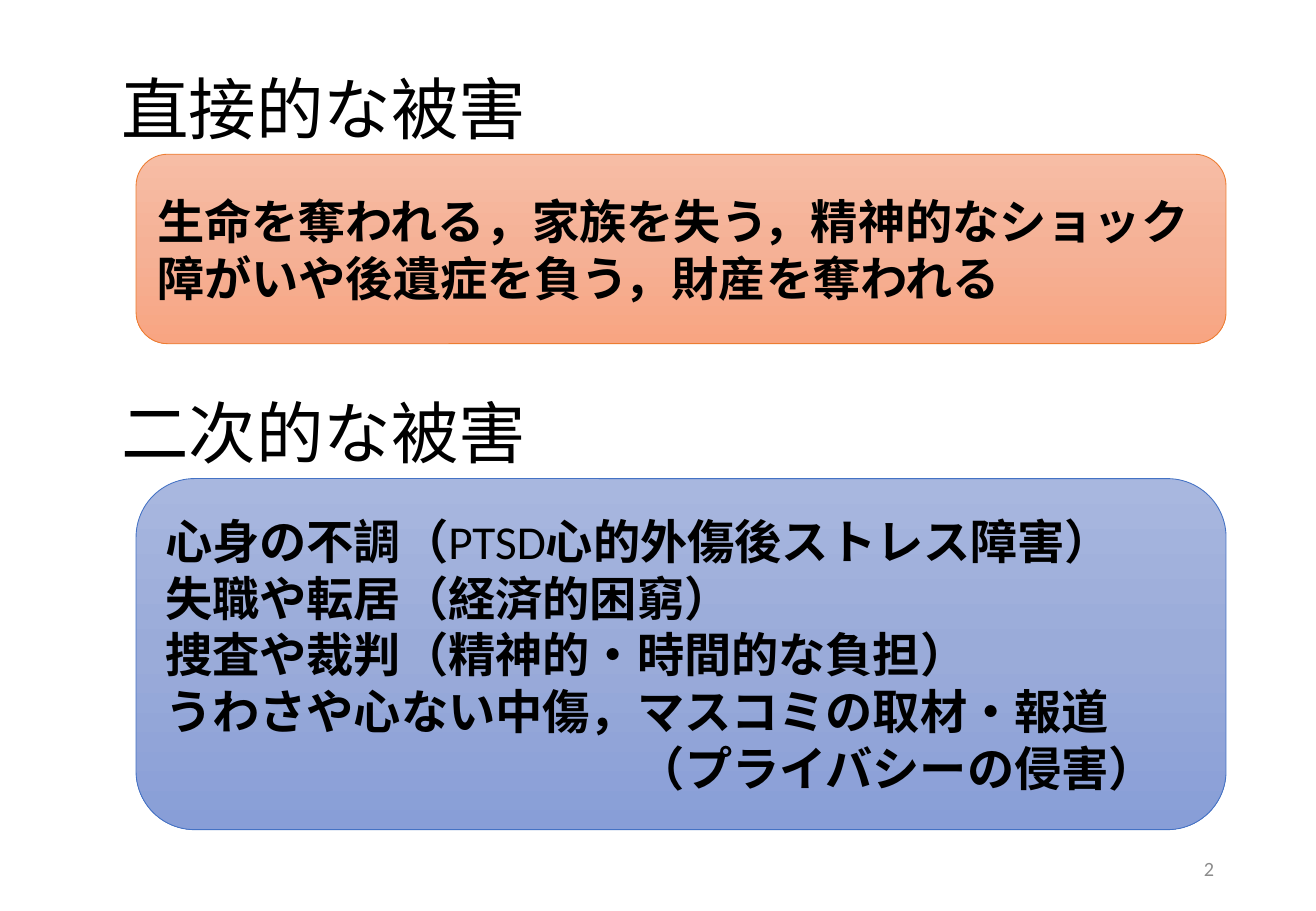
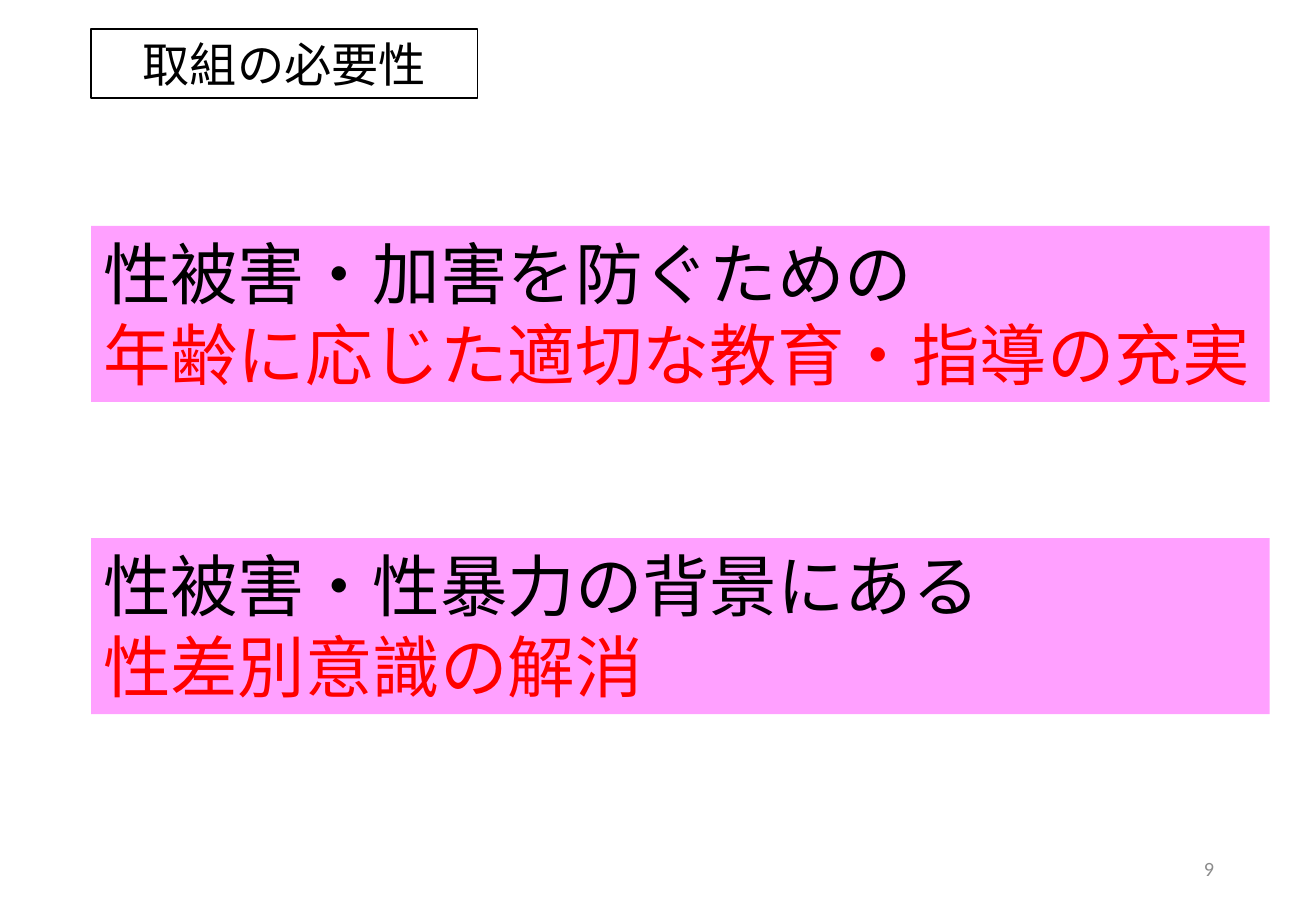
"""Builds two slides on the harm crime victims suffer and the action it calls for."""
from copy import deepcopy

from pptx import Presentation
from pptx.dml.color import RGBColor
from pptx.enum.shapes import MSO_SHAPE as Shape
from pptx.enum.text import MSO_ANCHOR as Anchor, PP_ALIGN as Align
from pptx.oxml.ns import qn
from pptx.util import Pt

PX = 9144
BLACK = RGBColor(0x00, 0x00, 0x00)
WHITE = RGBColor(0xFF, 0xFF, 0xFF)
RED = RGBColor(0xFF, 0x00, 0x00)
GREY = RGBColor(0x8C, 0x8C, 0x8C)
PINK = RGBColor(0xFF, 0xA0, 0xFF)
ORANGE = RGBColor(0xED, 0x7D, 0x31)
BLUE = RGBColor(0x44, 0x72, 0xC4)
ORANGE_SHADES = (RGBColor(0xF7, 0xBD, 0xA5), RGBColor(0xF5, 0xB1, 0x96), RGBColor(0xF8, 0xA5, 0x82))
BLUE_SHADES = (RGBColor(0xA8, 0xB7, 0xDF), RGBColor(0x9A, 0xAB, 0xD9), RGBColor(0x88, 0x9E, 0xD7))
GOTHIC = "Noto Sans CJK JP"
CALIBRI = "Calibri"


def add_panel(slide, kind, box, fill=None, line=None, width=1):
    panel = slide.shapes.add_shape(kind, *(v * PX for v in box))
    panel.shadow.inherit = False
    if fill is None:
        panel.fill.background()
    else:
        panel.fill.solid()
        panel.fill.fore_color.rgb = fill
    if line is None:
        panel.line.fill.background()
    else:
        panel.line.color.rgb = line
        panel.line.width = Pt(width)
    return panel


def write(shape, lines, size, font, colors=(BLACK,), bold=False, align=Align.LEFT, anchor=Anchor.TOP):
    frame = shape.text_frame
    frame.word_wrap = True
    frame.vertical_anchor = anchor
    frame.text = "\n".join(lines)
    for i, paragraph in enumerate(frame.paragraphs):
        paragraph.alignment = align
        paragraph.line_spacing = Pt(size * 1.2)
        before, term, after = paragraph.text.partition("PTSD")
        paragraph.text = before
        for part in filter(None, (term, after)):
            paragraph.add_run().text = part
        for run in paragraph.runs:
            run.font.size = Pt(size)
            run.font.bold = bold and run.text != "PTSD"
            run.font.color.rgb = colors[i % len(colors)]
            run.font.name = font
            east_asian = deepcopy(run.font._element.find(qn("a:latin")))
            east_asian.tag = qn("a:ea")
            run.font._element.find(qn("a:latin")).addnext(east_asian)


deck = Presentation()
deck.slide_width, deck.slide_height = 1083 * PX, 750 * PX
harm, action = (deck.slides.add_slide(deck.slide_layouts[6]) for _ in range(2))

for slide, number in ((harm, "2"), (action, "9")):
    page = slide.shapes.add_textbox(*(v * PX for v in (765, 695, 244, 40)))
    write(page, [number], 12, CALIBRI, (GREY,), align=Align.RIGHT, anchor=Anchor.MIDDLE)

HARMS = (
    ("直接的な被害", 50, 156, ORANGE, ORANGE_SHADES, (
        "生命を奪われる，家族を失う，精神的なショック",
        "障がいや後遺症を負う，財産を奪われる")),
    ("二次的な被害", 317, 289, BLUE, BLUE_SHADES, (
        "心身の不調（PTSD心的外傷後ストレス障害）",
        "失職や転居（経済的困窮）",
        "捜査や裁判（精神的・時間的な負担）",
        "うわさや心ない中傷，マスコミの取材・報道",
        "（プライバシーの侵害）")),
)
for title, top, height, line, shades, examples in HARMS:
    heading = harm.shapes.add_textbox(*(v * PX for v in (90, top, 511, 77)))
    write(heading, [title], 40, GOTHIC)
    panel = add_panel(harm, Shape.ROUNDED_RECTANGLE, (112, top + 77, 897, height), WHITE, line, 0.5)
    panel.fill.gradient()
    panel.fill.gradient_angle = 270
    first_stop = panel._element.spPr.find(".//" + qn("a:gs"))
    first_stop.addnext(deepcopy(first_stop))
    for stop, shade, position in zip(panel.fill.gradient_stops, shades, (0, 0.5, 1)):
        stop.color.rgb = shade
        stop.position = position
    write(panel, examples, 28, CALIBRI, bold=True, anchor=Anchor.MIDDLE)

privacy = panel.text_frame.paragraphs[-1]
privacy._p.get_or_add_pPr().set("marL", str(389 * PX))

label = add_panel(action, Shape.RECTANGLE, (75, 24, 318, 57), WHITE, BLACK)
write(label, ["取組の必要性"], 28, GOTHIC, align=Align.CENTER)

NEEDS = (
    (186, ("性被害・加害を防ぐための", "年齢に応じた適切な教育・指導の充実")),
    (443, ("性被害・性暴力の背景にある", "性差別意識の解消")),
)
for top, need in NEEDS:
    band = add_panel(action, Shape.RECTANGLE, (75, top, 970, 145), PINK)
    write(band, need, 40, GOTHIC, (BLACK, RED))

deck.save("out.pptx")
